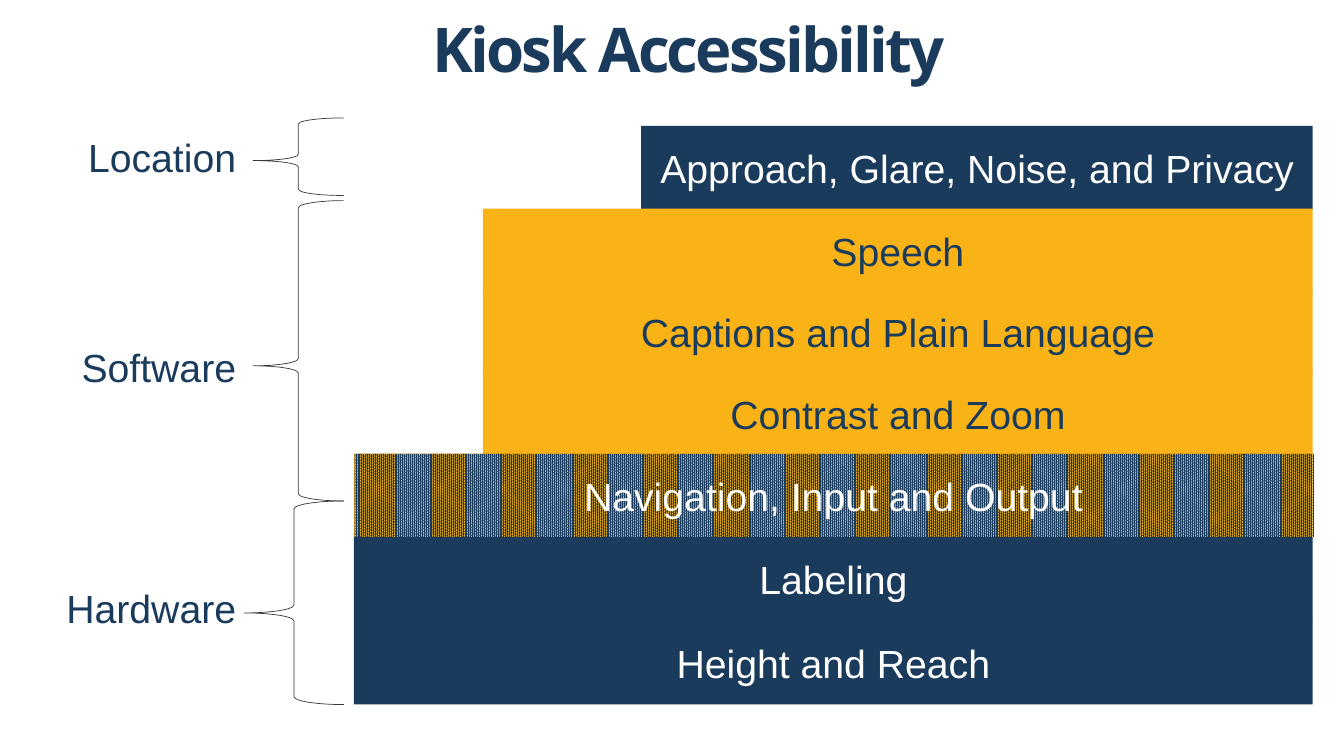
from pptx import Presentation
from pptx.dml.color import RGBColor
from pptx.enum.dml import MSO_PATTERN
from pptx.enum.shapes import MSO_SHAPE as Shape
from pptx.enum.text import MSO_ANCHOR as Anchor, PP_ALIGN as Align
from pptx.oxml.ns import qn
from pptx.util import Inches, Pt

NAVY = RGBColor(0x1A, 0x3B, 0x5B)
GOLD = RGBColor(0xF9, 0xB3, 0x17)
WHITE = RGBColor(0xFF, 0xFF, 0xFF)
GRAY = RGBColor(0x38, 0x38, 0x38)

WIDTH, HEIGHT = 13.33, 7.5
TITLE = "Kiosk Accessibility"
STEP_RIGHT, STEP_HEIGHT = 13.02, 0.83
LABEL_RIGHT, LABEL_WIDTH, LABEL_HEIGHT = 2.44, 1.91, 0.57
BRACE_RIGHT = 3.41

# (left, top, row pitch, fill, text colour, steps); a fill of None is patterned
TIERS = [
    (6.36, 1.25, 0.83, NAVY, WHITE, ["Approach, Glare, Noise, and Privacy"]),
    (4.79, 2.07, 0.81, GOLD, NAVY, ["Speech", "Captions and Plain Language", "Contrast and Zoom"]),
    (3.51, 4.5, 0.83, None, WHITE, ["Navigation, Input and Output"]),
    (3.51, 5.33, 0.83, NAVY, WHITE, ["Labeling", "Height and Reach"]),
]
# (label, label top, brace left, brace top, brace bottom)
GROUPS = [
    ("Location", 1.27, 2.51, 1.17, 1.94),
    ("Software", 3.36, 2.51, 1.99, 4.97),
    ("Hardware", 5.75, 2.42, 4.97, 6.99),
]


def write(box, text, color, size=28, name="Arial", align=Align.CENTER):
    para = box.text_frame.paragraphs[0]
    para.text = text
    para.alignment = align
    para.font.size, para.font.name = Pt(size), name
    para.font.color.rgb = color
    return para


def add_shape(page, kind, left, top, right, height):
    shape = page.shapes.add_shape(
        kind, Inches(left), Inches(top), Inches(right - left), Inches(height))
    shape.shadow.inherit = False
    return shape


def add_title(page):
    left = 4.19
    box = page.shapes.add_textbox(
        Inches(left), Inches(0.13), Inches(WIDTH - left), Inches(0.77))
    box.text_frame.word_wrap = True
    box.text_frame.vertical_anchor = Anchor.BOTTOM
    para = write(box, TITLE, NAVY, 44, "Open Sans", Align.LEFT)
    para.line_spacing = 0.9
    para.font.bold = True
    para.runs[0].font._element.set("spc", "-200")


def add_step(page, left, top, fill, color, text):
    step = add_shape(page, Shape.RECTANGLE, left, top, STEP_RIGHT, STEP_HEIGHT)
    if fill is None:
        step.fill.patterned()
        step.fill.pattern = MSO_PATTERN.PERCENT_90
        step.fill.fore_color.rgb = NAVY
        step.fill.back_color.rgb = GOLD
    else:
        step.fill.solid()
        step.fill.fore_color.rgb = fill
    step.line.fill.background()
    step.text_frame.vertical_anchor = Anchor.MIDDLE
    write(step, text, color)


def add_group(page, text, label_top, left, top, bottom):
    label = page.shapes.add_textbox(
        Inches(LABEL_RIGHT - LABEL_WIDTH), Inches(label_top),
        Inches(LABEL_WIDTH), Inches(LABEL_HEIGHT))
    label.text_frame.word_wrap = False
    write(label, text, NAVY, align=Align.RIGHT)
    brace = add_shape(page, Shape.RIGHT_BRACE, left, top, BRACE_RIGHT, bottom - top)
    brace._element.spPr.find(qn("a:xfrm")).set("flipH", "1")
    brace.adjustments[0], brace.adjustments[1] = 0.08, 0.55
    brace.fill.background()
    brace.line.color.rgb = GRAY
    brace.line.width = Pt(0.5)


def main():
    """Build the kiosk accessibility staircase."""
    deck = Presentation()
    deck.slide_width, deck.slide_height = Inches(WIDTH), Inches(HEIGHT)
    page = deck.slides.add_slide(deck.slide_layouts[6])
    add_title(page)
    for left, top, pitch, fill, color, steps in TIERS:
        for row, text in enumerate(steps):
            add_step(page, left, top + row * pitch, fill, color, text)
    for group in GROUPS:
        add_group(page, *group)
    deck.save("out.pptx")


if __name__ == "__main__":
    main()
